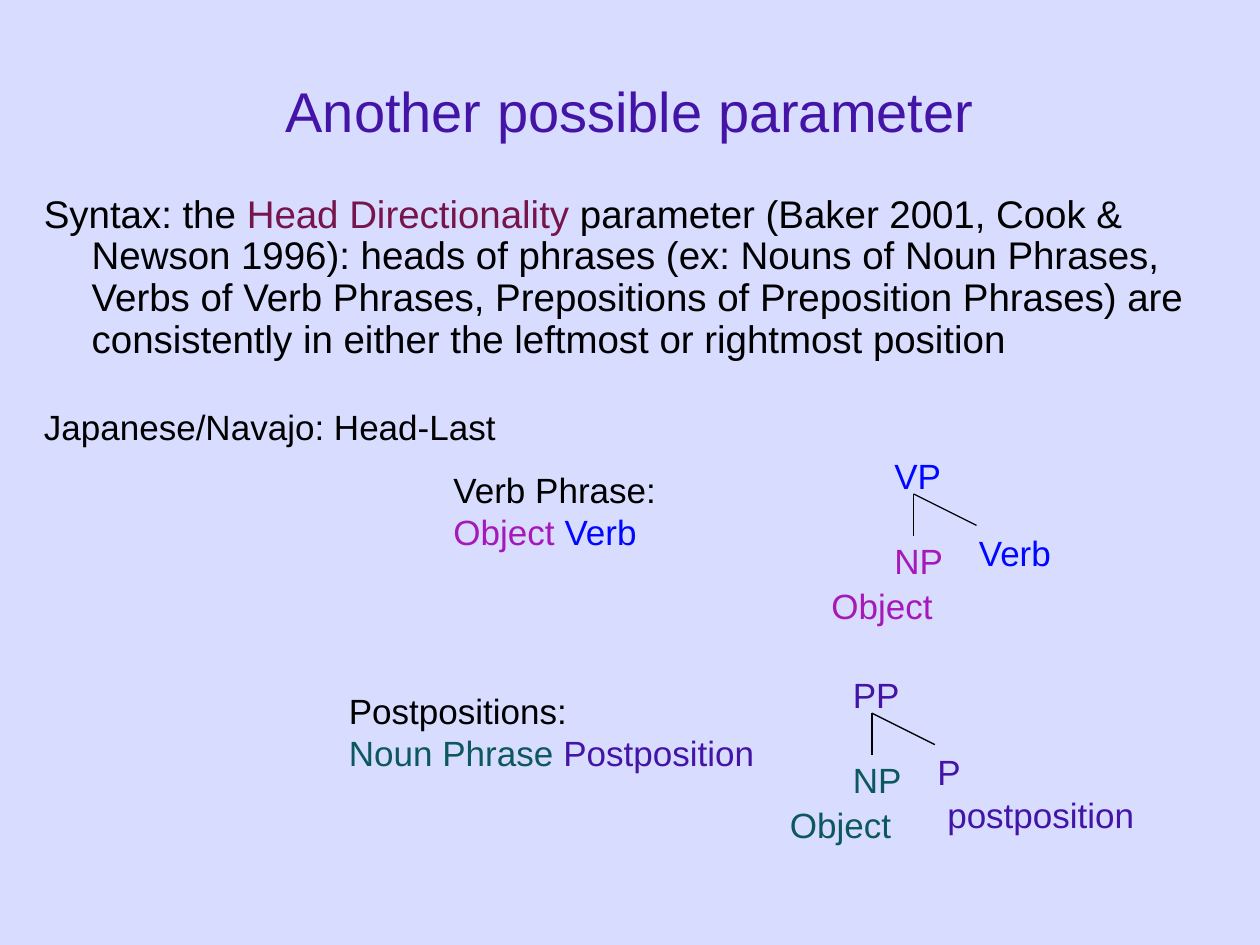
"""Build a slide on the head directionality parameter with two phrase trees."""
from lxml.etree import SubElement
from pptx import Presentation
from pptx.dml.color import RGBColor
from pptx.enum.shapes import MSO_CONNECTOR
from pptx.enum.text import MSO_ANCHOR, PP_ALIGN
from pptx.oxml.ns import qn
from pptx.util import Inches, Pt

BLACK, BLUE, PURPLE = "000000", "0006FF", "4414A7"
MAGENTA, TEAL, WINE = "A519B9", "0D585D", "76154B"


def rgb(color):
    return RGBColor.from_string(color)


def add_text(x, y, w, h, lines, size=20, wrap=True):
    tf = s.shapes.add_textbox(Inches(x), Inches(y), Inches(w), Inches(h)).text_frame
    tf.word_wrap = wrap
    for i, line in enumerate(lines):
        p = tf.add_paragraph() if i else tf.paragraphs[0]
        for text, color in line:
            r = p.add_run()
            r.text = text
            r.font.size = Pt(size)
            r.font.name = "Arial"
            r.font.color.rgb = rgb(color)
    return tf


prs = Presentation()
prs.slide_width, prs.slide_height = Inches(10), Inches(7.5)
s = prs.slides.add_slide(prs.slide_layouts[5])
s.background.fill.solid()
s.background.fill.fore_color.rgb = rgb("D8DCFF")

title = s.shapes.title
title.left, title.top = Inches(0.75), Inches(0.25)
title.width, title.height = Inches(8.5), Inches(1.25)
tf = title.text_frame
tf.text = "Another possible parameter"
tf.vertical_anchor = MSO_ANCHOR.MIDDLE
p = tf.paragraphs[0]
p.alignment = PP_ALIGN.CENTER
font = p.runs[0].font
font.size, font.name = Pt(32), "Arial"
font.color.rgb = rgb(PURPLE)

body = add_text(0.25, 1.5, 9.33, 2, [[
    ("Syntax: the ", BLACK),
    ("Head Directionality", WINE),
    (" parameter (Baker 2001, Cook & Newson 1996): heads of phrases "
     "(ex: Nouns of Noun Phrases, Verbs of Verb Phrases, Prepositions of "
     "Preposition Phrases) are consistently in either the leftmost or "
     "rightmost position", BLACK),
]], size=22)
p = body.paragraphs[0]
p.line_spacing = 0.9
pPr = p._p.get_or_add_pPr()
pPr.set("marL", str(Inches(0.38)))
pPr.set("indent", str(-Inches(0.38)))
SubElement(SubElement(pPr, qn("a:spcBef")), qn("a:spcPct")).set("val", "20000")

add_text(0.25, 3.17, 4.83, 0.43, [[("Japanese/Navajo: Head-Last", BLACK)]])
add_text(3.5, 3.67, 3.25, 0.77, [
    [("Verb Phrase:", BLACK)], [("Object ", MAGENTA), ("Verb", BLUE)]])
add_text(2.67, 5.42, 4.42, 0.77, [
    [("Postpositions:", BLACK)],
    [("Noun Phrase ", TEAL), ("Postposition", PURPLE)]])

trees = [
    (7, 3.56, "VP", "Verb", BLUE, MAGENTA),
    (6.67, 5.3, "PP", "P", PURPLE, TEAL),
]
for x, y, phrase, head, head_color, object_color in trees:
    add_text(x, y, 0.57, 0.43, [[(phrase, head_color)]], wrap=False)
    add_text(x, y + 0.67, 0.59, 0.43, [[("NP", object_color)]], wrap=False)
    add_text(x - 0.5, y + 1.03, 1.42, 0.43, [[("Object", object_color)]])
    add_text(x + 0.67, y + 0.61, 1.08, 0.43, [[(head, head_color)]])
    for dx, dy in [(0, 0.33), (0.5, 0.25)]:
        x1, y1 = x + 0.25, y + 0.36
        branch = s.shapes.add_connector(
            MSO_CONNECTOR.STRAIGHT, Inches(x1), Inches(y1),
            Inches(x1 + dx), Inches(y1 + dy))
        branch.line.color.rgb = rgb(BLACK)
        branch.line.width = Pt(0.75)
        SubElement(branch._element.spPr, qn("a:effectLst"))

add_text(7.42, 6.25, 2.33, 0.43, [[("postposition", PURPLE)]])

prs.save("out.pptx")
